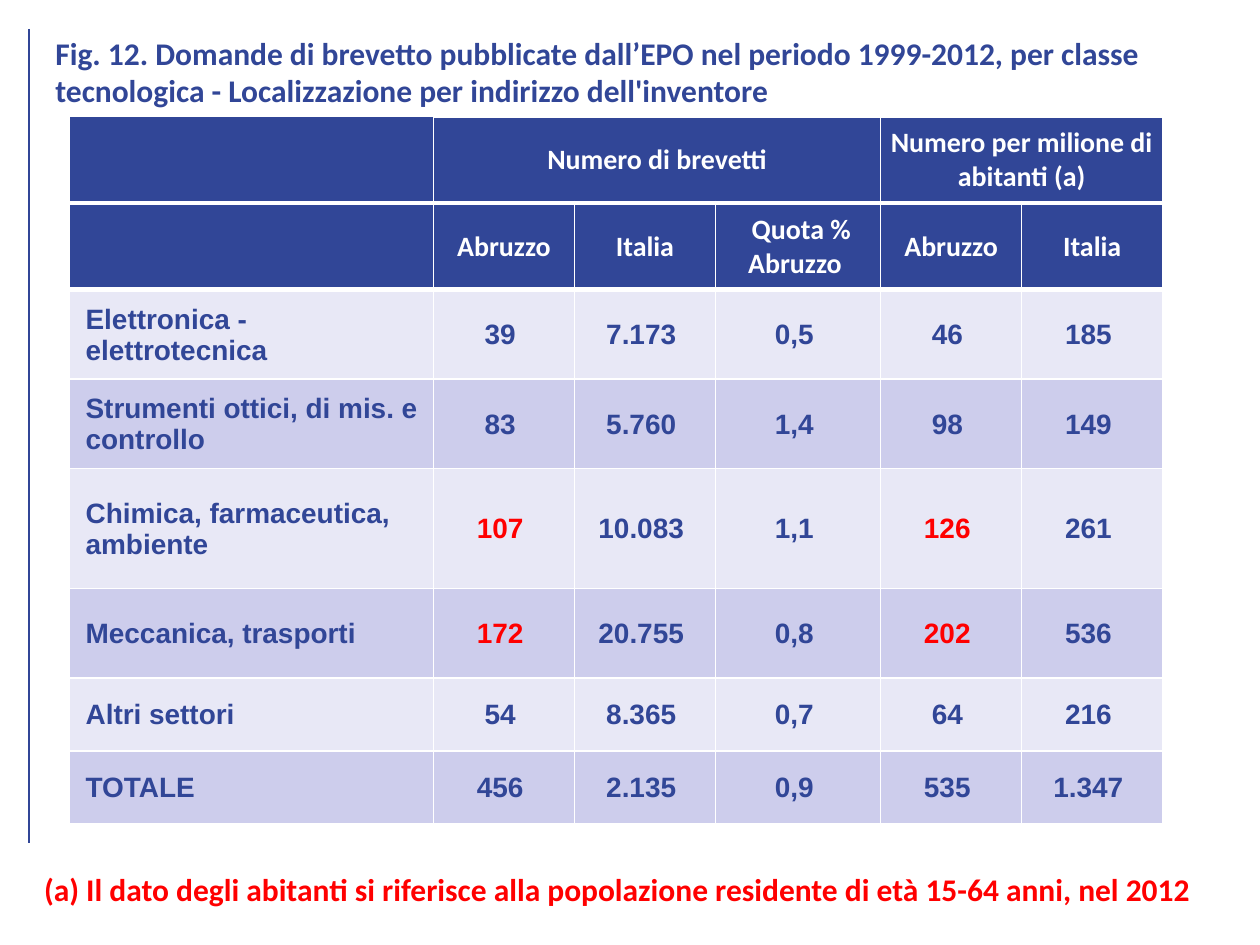
from lxml.etree import SubElement
from pptx import Presentation
from pptx.dml.color import RGBColor
from pptx.enum.shapes import MSO_CONNECTOR
from pptx.enum.text import MSO_ANCHOR, PP_ALIGN
from pptx.oxml.ns import qn
from pptx.util import Inches, Pt

COLORS = {
    "blue": "314697",
    "red": "FF0000",
    "white": "FFFFFF",
    "light": "E8E8F6",
    "dark": "CDCDEC",
}
TITLE = (
    "Fig. 12. Domande di brevetto pubblicate dall’EPO nel periodo 1999-2012, "
    "per classe tecnologica - Localizzazione per indirizzo dell'inventore"
)
FOOTNOTE = (
    "(a) Il dato degli abitanti si riferisce alla popolazione residente "
    "di età 15-64 anni, nel 2012"
)
HEADERS = [
    ["", "Numero di brevetti", "", "", "Numero per milione di abitanti (a)", ""],
    ["", "Abruzzo", "Italia", " Quota % Abruzzo ", "Abruzzo", "Italia"],
]
SECTORS = [
    ["Elettronica - elettrotecnica", "39", "7.173", "0,5", "46", "185"],
    ["Strumenti ottici, di mis. e controllo", "83", "5.760", "1,4", "98", "149"],
    ["Chimica, farmaceutica, ambiente", "107", "10.083", "1,1", "126", "261"],
    ["Meccanica, trasporti", "172", "20.755", "0,8", "202", "536"],
    ["Altri settori", "54", "8.365", "0,7", "64", "216"],
    ["TOTALE", "456", "2.135", "0,9", "535", "1.347"],
]
HIGHLIGHTS = {"107", "126", "172", "202"}
COLUMN_WIDTHS = [2.89, 1.12, 1.12, 1.31, 1.12, 1.12]
ROW_HEIGHTS = [0.69, 0.69, 0.71, 0.71, 0.95, 0.71, 0.58, 0.58]
CELL_FORMAT = {
    "margin_left": Inches(0.01),
    "margin_right": Inches(0.01),
    "margin_top": Inches(0.01),
    "margin_bottom": 0,
    "vertical_anchor": MSO_ANCHOR.MIDDLE,
}
BOX_FORMAT = {
    "word_wrap": True,
    "margin_left": Inches(0.09),
    "margin_right": Inches(0.09),
    "margin_top": Inches(0.04),
    "margin_bottom": Inches(0.04),
}


def set_attributes(target, values):
    """Set every attribute named in a dict of format values."""
    for name, value in values.items():
        setattr(target, name, value)


def add_run(paragraph, text, size, font_name, color):
    """Add a bold run with the given font."""
    run = paragraph.add_run()
    run.text = text
    set_attributes(run.font, {"size": Pt(size), "name": font_name, "bold": True})
    run.font.color.rgb = RGBColor.from_string(COLORS[color])


def add_text(slide, text, left, top, width, height, color):
    """Add a wrapped text box with one paragraph."""
    shape = slide.shapes.add_textbox(*map(Inches, (left, top, width, height)))
    set_attributes(shape.text_frame, BOX_FORMAT)
    paragraph = shape.text_frame.paragraphs[0]
    paragraph.line_spacing = 0.97
    add_run(paragraph, text, 18, "Calibri", color)


def add_rule(slide):
    """Draw the thin vertical line at the left margin."""
    x = Inches(0.23)
    connector = slide.shapes.add_connector(
        MSO_CONNECTOR.STRAIGHT, x, Inches(0.23), x, Inches(6.69)
    )
    connector.line.color.rgb = RGBColor.from_string(COLORS["blue"])
    connector.line.width = Pt(0.75)
    SubElement(connector._element.spPr, qn("a:effectLst"))


def set_borders(cell, top, bottom):
    """Give a cell white borders, with top and bottom widths in points."""
    properties = cell._tc.get_or_add_tcPr()
    widths = {"lnL": 1, "lnR": 1, "lnT": top, "lnB": bottom}
    for tag, width in widths.items():
        line = SubElement(properties, qn(f"a:{tag}"), w=str(Pt(width)))
        fill = SubElement(line, qn("a:solidFill"))
        SubElement(fill, qn("a:srgbClr"), val=COLORS["white"])


def format_cell(cell, fill, top, bottom):
    """Apply margins, borders and fill to a cell."""
    set_attributes(cell, CELL_FORMAT)
    set_borders(cell, top, bottom)
    cell.fill.solid()
    cell.fill.fore_color.rgb = RGBColor.from_string(COLORS[fill])


def fill_header(table):
    """Write the two header rows and merge the group titles."""
    for row, texts in enumerate(HEADERS):
        for column, text in enumerate(texts):
            cell = table.cell(row, column)
            format_cell(cell, "blue", 3 if row or column else 1, 3)
            if text:
                paragraph = cell.text_frame.paragraphs[0]
                paragraph.alignment = PP_ALIGN.CENTER
                add_run(paragraph, text, 16, "Calibri", "white")
    table.cell(0, 1).merge(table.cell(0, 3))
    table.cell(0, 4).merge(table.cell(0, 5))


def fill_body(table):
    """Write the sector rows in alternating bands."""
    for row, texts in enumerate(SECTORS):
        for column, text in enumerate(texts):
            cell = table.cell(row + len(HEADERS), column)
            format_cell(cell, "dark" if row % 2 else "light", 1 if row else 3, 1)
            paragraph = cell.text_frame.paragraphs[0]
            if column:
                paragraph.alignment = PP_ALIGN.CENTER
                text_color = "red" if text in HIGHLIGHTS else "blue"
                add_run(paragraph, f"{text} ", 16, "Arial", text_color)
            else:
                properties = paragraph._p.get_or_add_pPr()
                properties.set("marL", str(Inches(0.12)))
                properties.set("indent", "0")
                add_run(paragraph, text, 16, "Arial", "blue")


def add_patent_table(slide):
    """Add the table of patent applications by sector."""
    table = slide.shapes.add_table(
        len(ROW_HEIGHTS), len(COLUMN_WIDTHS),
        Inches(0.55), Inches(0.92),
        Inches(sum(COLUMN_WIDTHS)), Inches(sum(ROW_HEIGHTS)),
    ).table
    set_attributes(table, {"first_row": False, "horz_banding": False})
    for column, width in zip(table.columns, COLUMN_WIDTHS):
        column.width = Inches(width)
    for row, height in zip(table.rows, ROW_HEIGHTS):
        row.height = Inches(height)
    fill_header(table)
    fill_body(table)


def main():
    """Build the slide and save it."""
    presentation = Presentation()
    size = {"slide_width": Inches(10), "slide_height": Inches(7.5)}
    set_attributes(presentation, size)
    slide = presentation.slides.add_slide(presentation.slide_layouts[6])
    add_rule(slide)
    add_text(slide, TITLE, 0.35, 0.25, 9.43, 0.67, "blue")
    add_patent_table(slide)
    add_text(slide, FOOTNOTE, 0.26, 6.88, 9.43, 0.38, "red")
    presentation.save("out.pptx")


if __name__ == "__main__":
    main()
